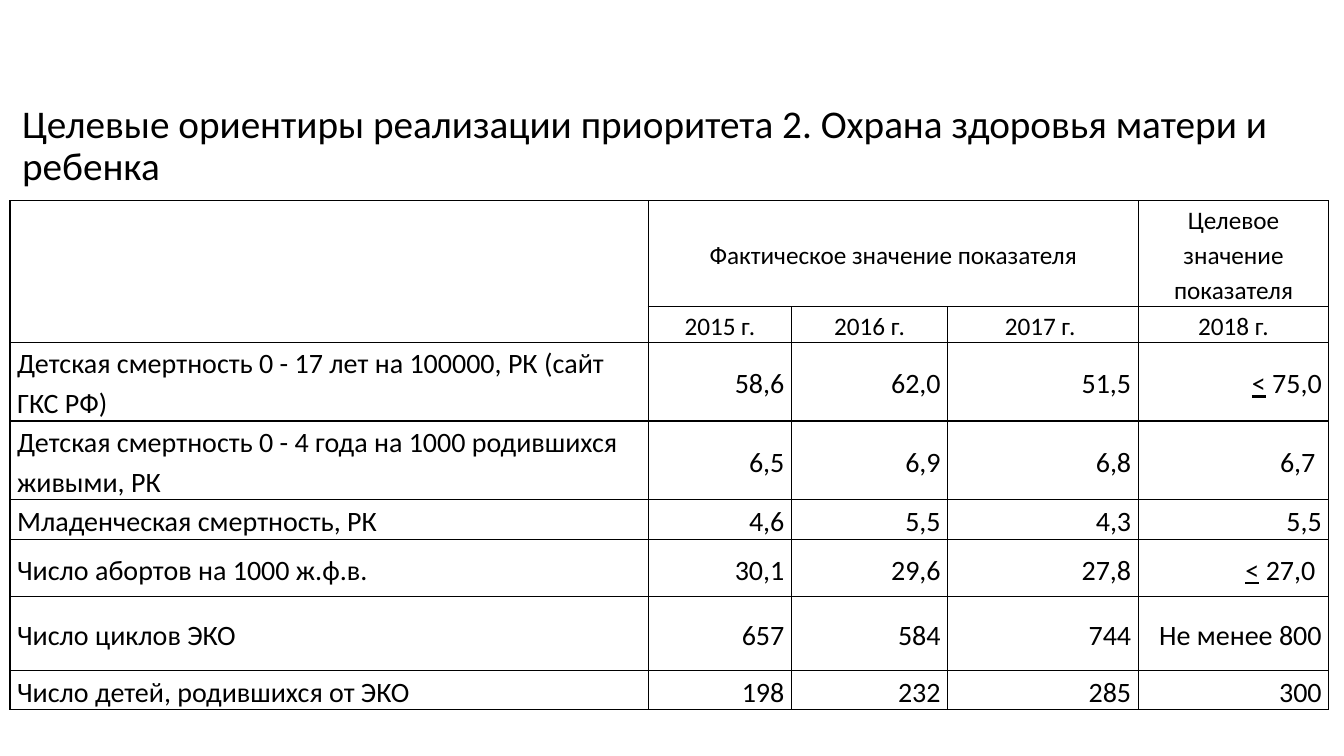
import pptx
import pptx.util
import pptx.dml.color
import pptx.enum.text
import pptx.oxml
import pptx.oxml.ns

Inches, Pt = pptx.util.Inches, pptx.util.Pt
ALIGN, ANCHOR = pptx.enum.text.PP_ALIGN, pptx.enum.text.MSO_ANCHOR

COLORS = {"text": "000000", "border": "000000"}
FONT = "Calibri"
TITLE = "Целевые ориентиры реализации приоритета 2. Охрана здоровья матери и ребенка"
ROWS = [
    ["", "Фактическое значение показателя", "", "", "Целевое значение показателя"],
    ["", "2015 г.", "2016 г.", "2017 г. ", "2018 г."],
    ["Детская смертность 0 - 17 лет на 100000, РК (сайт ГКС РФ)", "58,6", "62,0", "51,5", "< 75,0"],
    ["Детская смертность 0 - 4 года на 1000 родившихся живыми, РК", "6,5", "6,9", "6,8", "6,7 "],
    ["Младенческая смертность, РК", "4,6", "5,5", "4,3", "5,5"],
    ["Число абортов на 1000 ж.ф.в.", "30,1", "29,6", "27,8", "< 27,0 "],
    ["Число циклов ЭКО", "657", "584", "744", "Не менее 800"],
    ["Число детей, родившихся от ЭКО", "198", "232", "285", "300"],
]
COLUMN_WIDTHS = [6.33, 1.42, 1.55, 1.89, 1.89]
ROW_HEIGHTS = [0.99, 0.35, 0.73, 0.73, 0.35, 0.57, 0.73, 0.35]
HEADER_ROWS = 2
BOTTOM_LABEL_ROWS = (2, 3, 4)


def set_font(paragraph, size):
    paragraph.font.name = FONT
    paragraph.font.size = Pt(size)
    paragraph.font.color.rgb = pptx.dml.color.RGBColor.from_string(COLORS["text"])


def add_borders(cell):
    properties = cell._tc.get_or_add_tcPr()
    for position, side in enumerate(("lnL", "lnR", "lnT", "lnB")):
        properties.insert(position, pptx.oxml.parse_xml(
            f'<a:{side} {pptx.oxml.ns.nsdecls("a")} w="{Pt(1)}"><a:solidFill>'
            f'<a:srgbClr val="{COLORS["border"]}"/></a:solidFill></a:{side}>'))


def write_text(paragraph, text):
    """Underline a leading "<", which stands for "at most"."""
    if text.startswith("<"):
        sign = paragraph.add_run()
        sign.text = "<"
        sign.font.underline = True
        text = text[1:]
    if text:
        paragraph.add_run().text = text


def fill_cell(cell, text, row, column):
    is_label = column == 0
    is_header = row < HEADER_ROWS and not is_label
    cell.fill.background()
    add_borders(cell)
    cell.margin_left = cell.margin_right = Inches(0.07)
    cell.margin_top = cell.margin_bottom = 0
    at_bottom = is_label and row in BOTTOM_LABEL_ROWS
    cell.vertical_anchor = ANCHOR.BOTTOM if at_bottom else ANCHOR.MIDDLE
    paragraph = cell.text_frame.paragraphs[0]
    write_text(paragraph, text)
    paragraph.line_spacing = 1.15
    if is_header:
        paragraph.alignment = ALIGN.CENTER
        paragraph.space_after = Pt(10)
    else:
        paragraph.alignment = ALIGN.LEFT if is_label else ALIGN.RIGHT
    set_font(paragraph, 18 if is_header else 20)


def add_title(slide):
    title = slide.shapes.title
    title.left, title.top, title.width, title.height = map(Inches, (0.12, 0.81, 13.1, 1.29))
    title.text_frame.text = TITLE
    title.text_frame.vertical_anchor = ANCHOR.MIDDLE
    paragraph = title.text_frame.paragraphs[0]
    paragraph.alignment = ALIGN.LEFT
    paragraph.line_spacing = 0.9
    set_font(paragraph, 28)


def add_indicators(slide):
    table = slide.shapes.add_table(
        len(ROWS), len(COLUMN_WIDTHS), Inches(0.1), Inches(1.99),
        Inches(sum(COLUMN_WIDTHS)), Inches(sum(ROW_HEIGHTS))).table
    table.first_row = table.horz_banding = False
    for column, width in zip(table.columns, COLUMN_WIDTHS):
        column.width = Inches(width)
    for table_row, height in zip(table.rows, ROW_HEIGHTS):
        table_row.height = Inches(height)
    for row, texts in enumerate(ROWS):
        for column, text in enumerate(texts):
            fill_cell(table.cell(row, column), text, row, column)
    table.cell(0, 0).merge(table.cell(1, 0))
    table.cell(0, 1).merge(table.cell(0, 3))


def main():
    presentation = pptx.Presentation()
    presentation.slide_width, presentation.slide_height = Inches(13.33), Inches(7.5)
    slide = presentation.slides.add_slide(presentation.slide_layouts[5])
    add_title(slide)
    add_indicators(slide)
    presentation.save("out.pptx")


if __name__ == "__main__":
    main()
